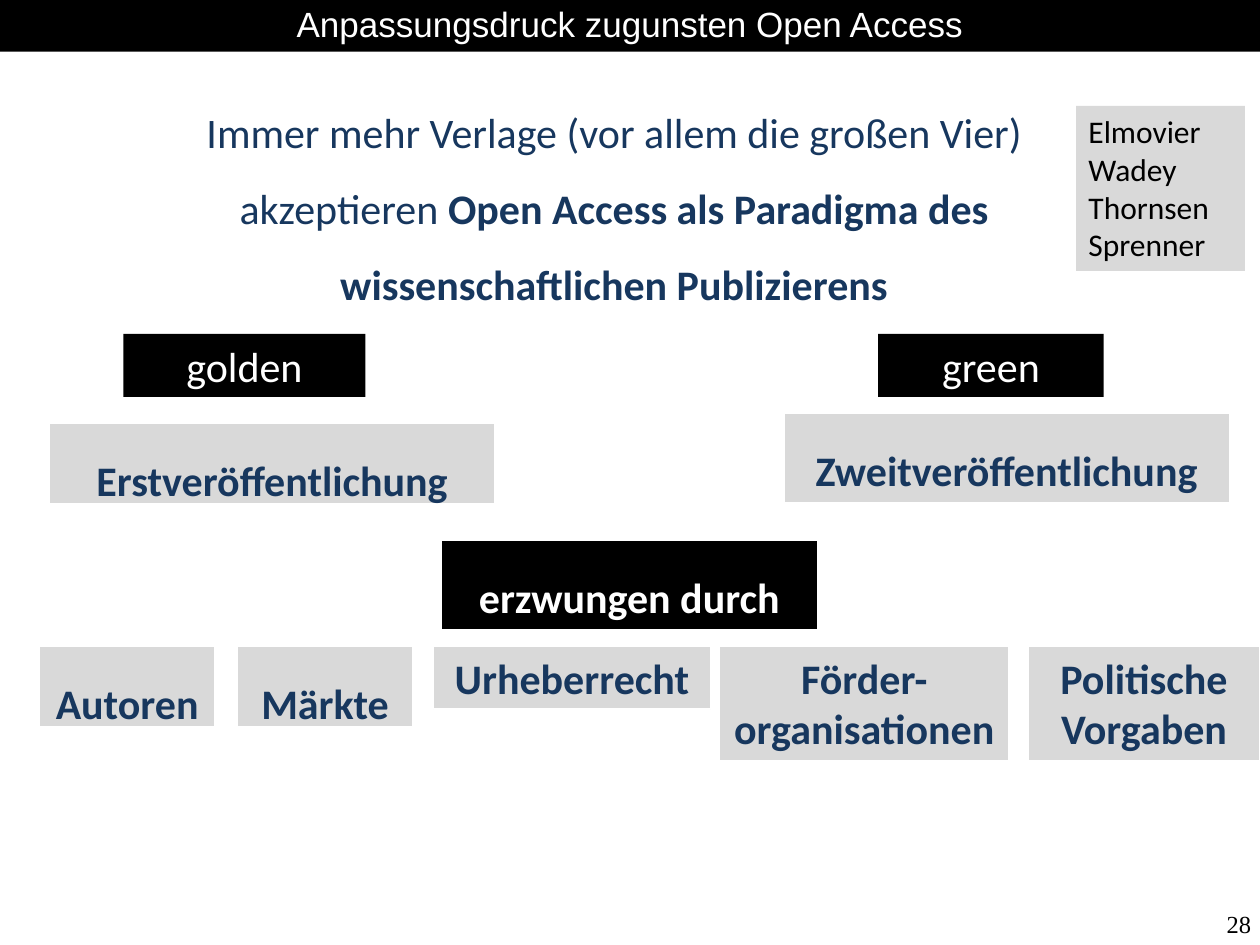
from pptx import Presentation
from pptx.dml.color import RGBColor
from pptx.enum.shapes import MSO_SHAPE as Shape
from pptx.enum.text import MSO_ANCHOR as Anchor, PP_ALIGN as Align
from pptx.util import Inches, Pt

# The grid has 100 columns and 75 rows
WIDTH, HEIGHT = Inches(10), Inches(7.5)
COLUMN, ROW = WIDTH / 100, HEIGHT / 75
BLACK, WHITE, GREY, NAVY = "000000", "FFFFFF", "D9D9D9", "17375E"


def color(value):
    return RGBColor.from_string(value)


def place(box):
    left, top, width, height = box
    return int(left * COLUMN), int(top * ROW), int(width * COLUMN), int(height * ROW)


def write(frame, paragraphs, ink, size=24, font="Calibri", align=Align.CENTER, spacing=None):
    """Fill a frame with paragraphs, each a list of (text, bold) runs."""
    frame.word_wrap = True
    for index, runs in enumerate(paragraphs):
        paragraph = frame.add_paragraph() if index else frame.paragraphs[0]
        paragraph.alignment = align
        if spacing:
            paragraph.line_spacing = spacing
        for text, bold in runs:
            run = paragraph.add_run()
            run.text = text
            run.font.name, run.font.size, run.font.bold = font, Pt(size), bold
            run.font.color.rgb = color(ink)


def add_panel(slide, box, paragraphs, fill, ink, outlined=False, **style):
    panel = slide.shapes.add_shape(Shape.RECTANGLE, *place(box))
    panel.shadow.inherit = False
    panel.fill.solid()
    panel.fill.fore_color.rgb = color(fill)
    if outlined:
        panel.line.color.rgb = color(WHITE)
        panel.line.width = Pt(1)
    else:
        panel.line.fill.background()
    panel.text_frame.vertical_anchor = Anchor.TOP
    write(panel.text_frame, paragraphs, ink, **style)


def add_label(slide, box, text, fill=GREY, ink=NAVY, spacing=None):
    add_panel(slide, box, [[(text, True)]], fill, ink, outlined=True, spacing=spacing)


def add_page_number(slide, box, number):
    frame = slide.shapes.add_textbox(*place(box)).text_frame
    frame.margin_left = frame.margin_right = frame.margin_top = 0
    frame.margin_bottom = Inches(0.05)
    frame.vertical_anchor = Anchor.BOTTOM
    write(frame, [[(number, False)]], BLACK, 14, "Times New Roman", Align.RIGHT)


def add_header(slide, box, title):
    add_panel(slide, box, [[(title, False)]], BLACK, WHITE, size=20, font="Arial")


def add_statement(slide, box):
    runs = [("Immer mehr Verlage (vor allem die großen Vier) akzeptieren ", False),
            ("Open Access als Paradigma des wissenschaftlichen Publizierens", True)]
    add_panel(slide, box, [runs], WHITE, NAVY, spacing=1.5)


def add_publishers(slide, box, names):
    add_panel(slide, box, [[(name, False)] for name in names], GREY, BLACK,
              size=18, align=Align.LEFT)


def add_route(slide, box, name, meaning, name_offset, name_width, meaning_height):
    """Black name at the top of the box, grey meaning resting on its bottom."""
    left, top, width, height = box
    add_panel(slide, (left + name_offset, top, name_width, 5), [[(name, False)]], BLACK, WHITE)
    add_label(slide, (left, top + height - meaning_height, width, meaning_height),
              meaning, spacing=1.5)


def add_drivers(slide, box):
    """Black heading above a row of grey labels."""
    left, top, width, height = box
    add_label(slide, (left + 31.9, top, 29.9, 7.1), "erzwungen durch", BLACK, WHITE, 1.5)
    drivers = [  # text, offset, width, height, line spacing
        ("Autoren", 0, 14, 6.4, 1.5),
        ("Märkte", 15.7, 14, 6.4, 1.5),
        ("Urheberrecht", 31.3, 22, 5, None),
        ("Förder-organisationen", 54, 23, 9.1, None),
        ("Politische Vorgaben", 78.5, width - 78.5, 9.1, None),
    ]
    row_top = top + height - 9.1
    for text, offset, label_width, label_height, spacing in drivers:
        add_label(slide, (left + offset, row_top, label_width, label_height),
                  text, spacing=spacing)


def main():
    presentation = Presentation()
    presentation.slide_width, presentation.slide_height = WIDTH, HEIGHT
    slide = presentation.slides.add_slide(presentation.slide_layouts[6])

    add_page_number(slide, (92.5, 69.8, 6.8, 5.2), "28")
    add_header(slide, (0, -0.3, 100, 4.4), "Anpassungsdruck zugunsten Open Access")
    add_statement(slide, (14.6, 6, 68.3, 18.6))
    add_publishers(slide, (85.4, 8.4, 13.4, 13.1), ["Elmovier", "Wadey", "Thornsen", "Sprenner"])
    add_route(slide, (3.9, 26.5, 35.4, 13.5), "golden", "Erstveröffentlichung", 5.9, 19.2, 6.4)
    add_route(slide, (62.2, 26.5, 35.4, 13.4), "green", "Zweitveröffentlichung", 7.5, 17.9, 7.1)
    add_drivers(slide, (3.1, 42.9, 96.9, 17.5))

    presentation.save("out.pptx")


if __name__ == "__main__":
    main()
